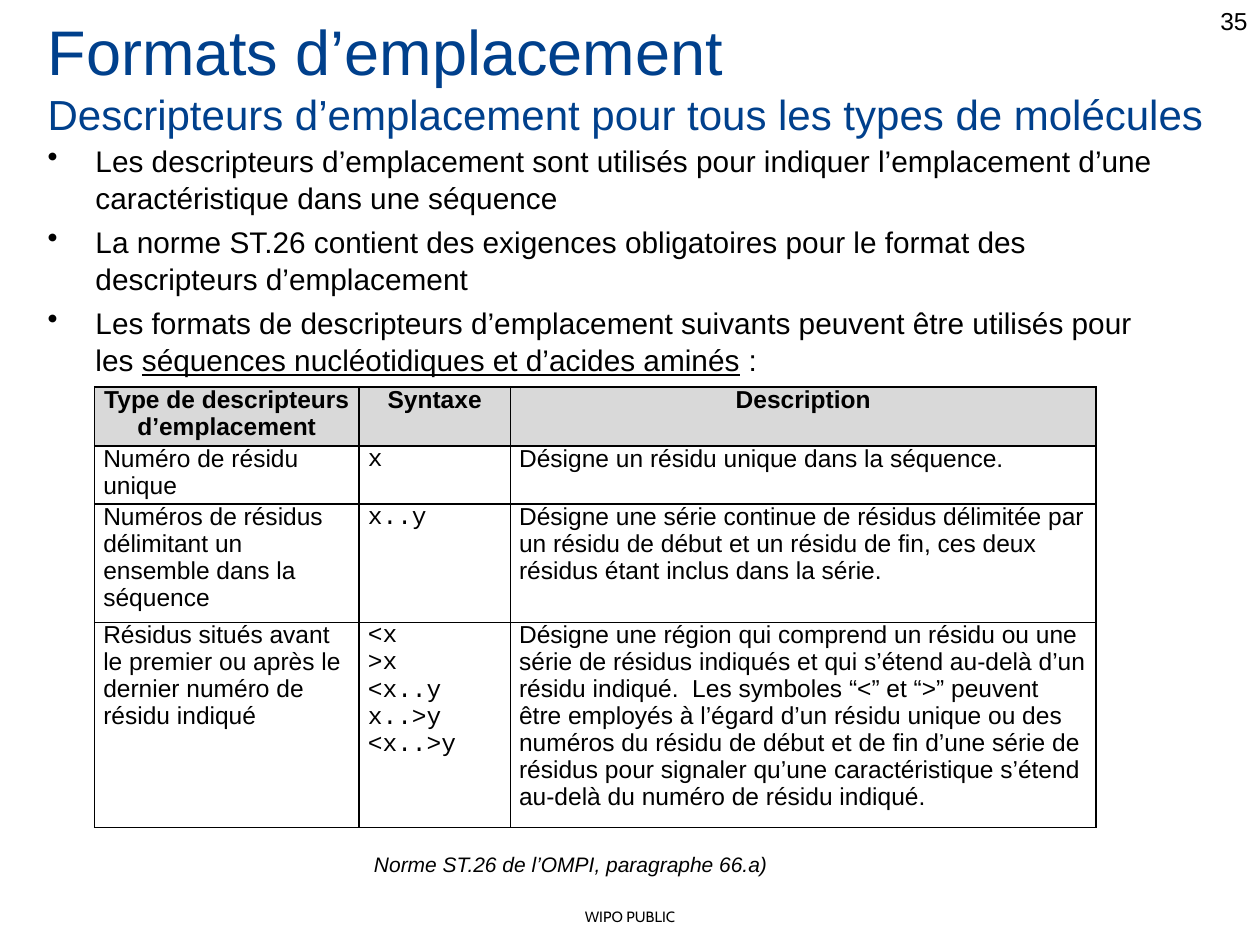
from lxml import etree
from pptx import Presentation
from pptx import util as u
from pptx.dml.color import RGBColor
from pptx.enum import text as t
from pptx.oxml import ns

BLACK = RGBColor(0x00, 0x00, 0x00)
BLUE = RGBColor(0x00, 0x40, 0x8C)
GREY = RGBColor(0xD9, 0xD9, 0xD9)
LEFT, CENTER, RIGHT = t.PP_ALIGN.LEFT, t.PP_ALIGN.CENTER, t.PP_ALIGN.RIGHT

BULLETS = [
    "Les descripteurs d’emplacement sont utilisés pour indiquer l’emplacement d’une "
    "caractéristique dans une séquence",
    "La norme ST.26 contient des exigences obligatoires pour le format des "
    "descripteurs d’emplacement",
    [("Les formats de descripteurs d’emplacement suivants peuvent être utilisés pour les ", False),
     ("séquences nucléotidiques et d’acides aminés", True),
     (" :", False)],
]
ROWS = [
    ["Type de descripteurs d’emplacement", "Syntaxe", "Description"],
    ["Numéro de résidu unique", "x", "Désigne un résidu unique dans la séquence."],
    ["Numéros de résidus délimitant un ensemble dans la séquence", "x..y",
     "Désigne une série continue de résidus délimitée par un résidu de début et un "
     "résidu de fin, ces deux résidus étant inclus dans la série."],
    ["Résidus situés avant le premier ou après le dernier numéro de résidu indiqué",
     "<x\n>x\n<x..y\nx..>y\n<x..>y",
     "Désigne une région qui comprend un résidu ou une série de résidus indiqués et qui "
     "s’étend au‑delà d’un résidu indiqué.  Les symboles “<” et “>” peuvent être employés "
     "à l’égard d’un résidu unique ou des numéros du résidu de début et de fin d’une série "
     "de résidus pour signaler qu’une caractéristique s’étend au‑delà du numéro de résidu "
     "indiqué."],
]
COLUMN_WIDTHS = [2.1, 1.2, 4.65]
ROW_HEIGHTS = [0.47, 0.46, 0.94, 1.63]


def write(para, content, size, color=BLACK, font="Arial", align=LEFT, bold=False,
          italic=False, bullet=None, before=0, spacing=None):
    if bullet:
        properties = para._p.get_or_add_pPr()
        properties.set("marL", str(u.Inches(0.38)))
        properties.set("indent", str(-u.Inches(0.38)))
        etree.SubElement(properties, ns.qn("a:buChar")).set("char", bullet)
    para.alignment = align
    para.space_before = u.Pt(before)
    if spacing:
        para.line_spacing = spacing
    spans = [(content, False)] if isinstance(content, str) else content
    for words, underline in spans:
        span = para.add_run()
        span.text = words
        span.font.name = font
        span.font.size = u.Pt(size)
        span.font.color.rgb = color
        span.font.bold = bold
        span.font.italic = italic
        span.font.underline = underline


class SlideBuilder:
    def __init__(self, page):
        self.page = page

    def text(self, place, lines, anchor=t.MSO_ANCHOR.TOP, top=0.05, gap=0, **style):
        box = self.page.shapes.add_textbox(*map(u.Inches, place))
        frame = box.text_frame
        frame.word_wrap = True
        frame.vertical_anchor = anchor
        frame.margin_top = u.Inches(top)
        for index, (line, size) in enumerate(lines):
            para = frame.add_paragraph() if index else frame.paragraphs[0]
            write(para, line, size, before=gap if index else 0, **style)

    def border(self, cell):
        properties = cell._tc.get_or_add_tcPr()
        for side in ("lnL", "lnR", "lnT", "lnB"):
            line = etree.SubElement(properties, ns.qn("a:" + side), w=str(u.Pt(1)))
            fill = etree.SubElement(line, ns.qn("a:solidFill"))
            etree.SubElement(fill, ns.qn("a:srgbClr"), val=str(BLACK))

    def cell(self, cell, content, header, font):
        cell.margin_left = cell.margin_right = u.Inches(0.07)
        cell.margin_top = cell.margin_bottom = 0
        self.border(cell)
        if header:
            cell.fill.solid()
            cell.fill.fore_color.rgb = GREY
        else:
            cell.fill.background()
        frame = cell.text_frame
        for index, line in enumerate(content.split("\n")):
            para = frame.add_paragraph() if index else frame.paragraphs[0]
            write(para, line, 14, font=font, bold=header, spacing=0.98,
                  align=CENTER if header else LEFT)

    def table(self, left, top):
        size = map(u.Inches, (left, top, sum(COLUMN_WIDTHS), sum(ROW_HEIGHTS)))
        table = self.page.shapes.add_table(len(ROWS), len(COLUMN_WIDTHS), *size).table
        table.first_row = table.horz_banding = False
        for column, width in zip(table.columns, COLUMN_WIDTHS):
            column.width = u.Inches(width)
        for row, height in zip(table.rows, ROW_HEIGHTS):
            row.height = u.Inches(height)
        for r, contents in enumerate(ROWS):
            for c, content in enumerate(contents):
                font = "Courier New" if r and c == 1 else "Arial"
                self.cell(table.cell(r, c), content, r == 0, font)


def main():
    deck = Presentation()
    deck.slide_width, deck.slide_height = u.Inches(10), u.Inches(7.5)
    builder = SlideBuilder(deck.slides.add_slide(deck.slide_layouts[6]))
    builder.text((0, 7.15, 10, 0.24), [("WIPO PUBLIC", 8.5)], font="Cabin",
                 align=CENTER, anchor=t.MSO_ANCHOR.MIDDLE)
    builder.text((7.67, 0, 2.33, 0.52), [("35", 14)], align=RIGHT)
    builder.text((0.28, -0.01, 9.53, 1.25),
                 [("Formats d’emplacement", 36),
                  ("Descripteurs d’emplacement pour tous les types de molécules", 24)],
                 color=BLUE, top=0.11)
    builder.text((0.28, 1.07, 9, 5.23), [(line, 17) for line in BULLETS],
                 bullet="•", gap=4, spacing=1.04)
    builder.text((2.87, 6.71, 5, 0.3),
                 [("Norme ST.26 de l’OMPI, paragraphe 66.a)", 12)], italic=True)
    builder.table(0.75, 3.07)
    deck.save("out.pptx")


if __name__ == "__main__":
    main()
